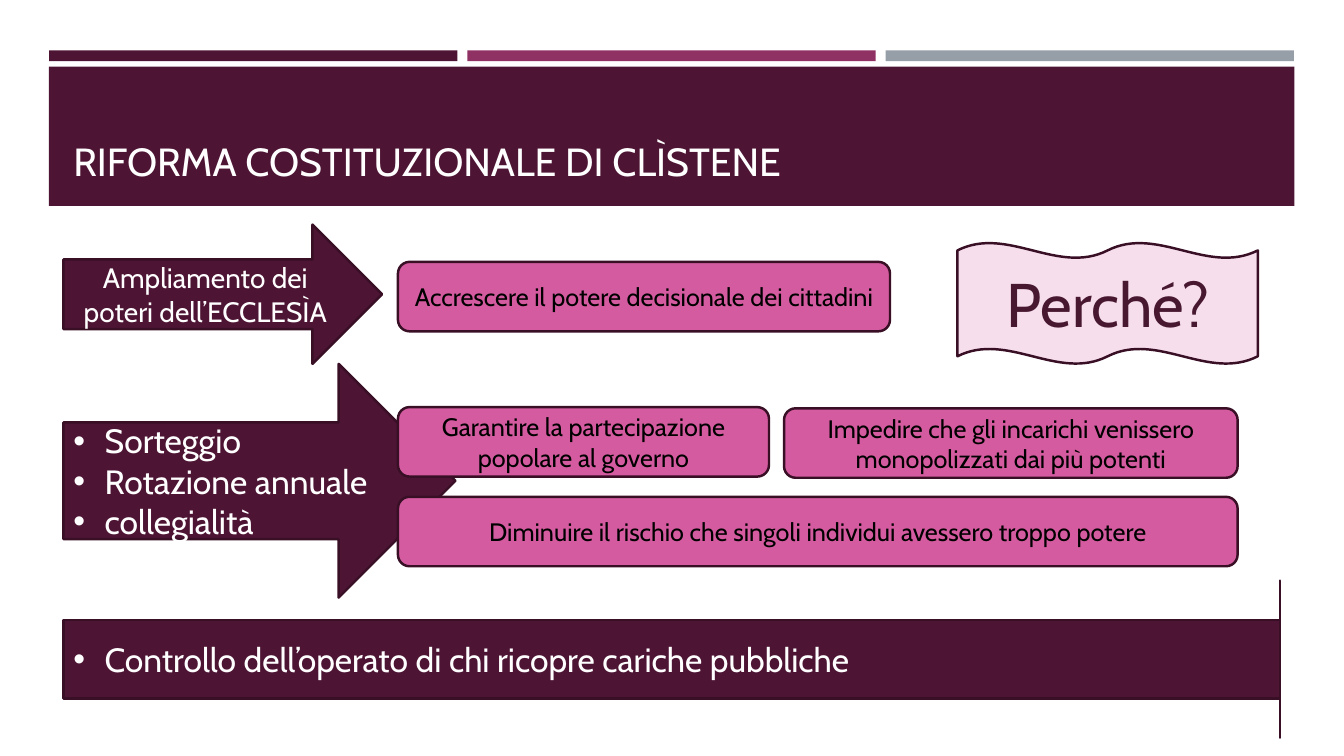
from lxml.etree import SubElement
from pptx import Presentation
from pptx.dml.color import RGBColor
from pptx.enum.shapes import MSO_SHAPE
from pptx.enum.text import MSO_ANCHOR, PP_ALIGN
from pptx.oxml.ns import qn
from pptx.util import Cm, Pt


def color(value):
    return RGBColor.from_string(value)


class SlideBuilder:
    font = "Cabin"
    plum = "4D1434"
    pink = "D45B9F"
    outline = "390F26"
    left = 1.6
    box_left = 10.03
    box_height = 1.75

    def __init__(self, page):
        self.page = page

    def shape(self, kind, place, fill, outlined=True):
        shape = self.page.shapes.add_shape(kind, *[Cm(length) for length in place])
        shape.shadow.inherit = False
        shape.fill.solid()
        shape.fill.fore_color.rgb = color(fill)
        if outlined:
            shape.line.color.rgb = color(self.outline)
            shape.line.width = Pt(1.75)
        else:
            shape.line.fill.background()
        return shape

    def label(self, shape, text, size, text_color, align=PP_ALIGN.CENTER,
              anchor=MSO_ANCHOR.MIDDLE):
        frame = shape.text_frame
        frame.text = text
        frame.word_wrap = True
        frame.vertical_anchor = anchor
        for para in frame.paragraphs:
            para.alignment = align
            for span in para.runs:
                span.font.name = self.font
                span.font.size = Pt(size)
                span.font.color.rgb = color(text_color)

    def bar(self, place, fill):
        self.shape(MSO_SHAPE.RECTANGLE, place, fill, outlined=False)

    def title(self, text, place):
        box = self.page.shapes.add_textbox(*[Cm(length) for length in place])
        self.label(box, text, 28, "FFFFFF", PP_ALIGN.LEFT, MSO_ANCHOR.BOTTOM)

    def arrow(self, text, top, width, height):
        arrow = self.shape(MSO_SHAPE.RIGHT_ARROW, (self.left, top, width, height), self.plum)
        self.label(arrow, text, 20, "FFFFFF")
        return arrow

    def bullet_arrow(self, items, top, width, height):
        arrow = self.arrow("", top, width, height)
        self.label(arrow, "\n".join(items), 24, "FFFFFF", PP_ALIGN.LEFT)
        for para in arrow.text_frame.paragraphs:
            properties = para._p.get_or_add_pPr()
            properties.set("marL", str(Cm(0.79)))
            properties.set("indent", str(-Cm(0.79)))
            SubElement(properties, qn("a:buFont"), typeface="Arial")
            SubElement(properties, qn("a:buChar"), char="•")
        return arrow

    def reason(self, text, left, top, width):
        place = (left, top, width, self.box_height)
        box = self.shape(MSO_SHAPE.ROUNDED_RECTANGLE, place, self.pink)
        self.label(box, text, 18, "000000")

    def wave(self, text, place):
        wave = self.shape(MSO_SHAPE.DOUBLE_WAVE, place, "F6DEEC")
        self.label(wave, text, 44, "481831")


def main():
    deck = Presentation()
    deck.slide_width, deck.slide_height = Cm(33.87), Cm(19.05)
    builder = SlideBuilder(deck.slides.add_slide(deck.slide_layouts[6]))

    for column, fill in enumerate((builder.plum, "903163", "969FA7")):
        builder.bar((1.24 + column * 10.54, 1.27, 10.29, 0.27), fill)
    builder.bar((1.23, 1.68, 31.39, 3.51), builder.plum)
    builder.title("RIFORMA COSTITUZIONALE DI CLÌSTENE", (builder.left, 2.03, 30.63, 2.74))

    builder.arrow("Ampliamento dei poteri dell’ECCLESÌA", 5.66, 8.03, 3.51)
    builder.bullet_arrow(("Sorteggio", "Rotazione annuale", "collegialità"), 9.17, 9.88, 5.89)
    control = builder.bullet_arrow(
        ("Controllo dell’operato di chi ricopre cariche pubbliche",), 14.63, 30.66, 3.96)
    control.adjustments[1] = 0

    for text, left, top, width in (
        ("Accrescere il potere decisionale dei cittadini", builder.box_left, 6.6, 12.4),
        ("Garantire la partecipazione popolare al governo", builder.box_left, 10.26, 9.35),
        ("Impedire che gli incarichi venissero monopolizzati dai più potenti",
         19.76, 10.29, 11.43),
        ("Diminuire il rischio che singoli individui avessero troppo potere",
         builder.box_left, 12.52, 21.16),
    ):
        builder.reason(text, left, top, width)
    builder.wave("Perché?", (24.13, 6.12, 7.57, 3.05))

    deck.save("out.pptx")


if __name__ == "__main__":
    main()
